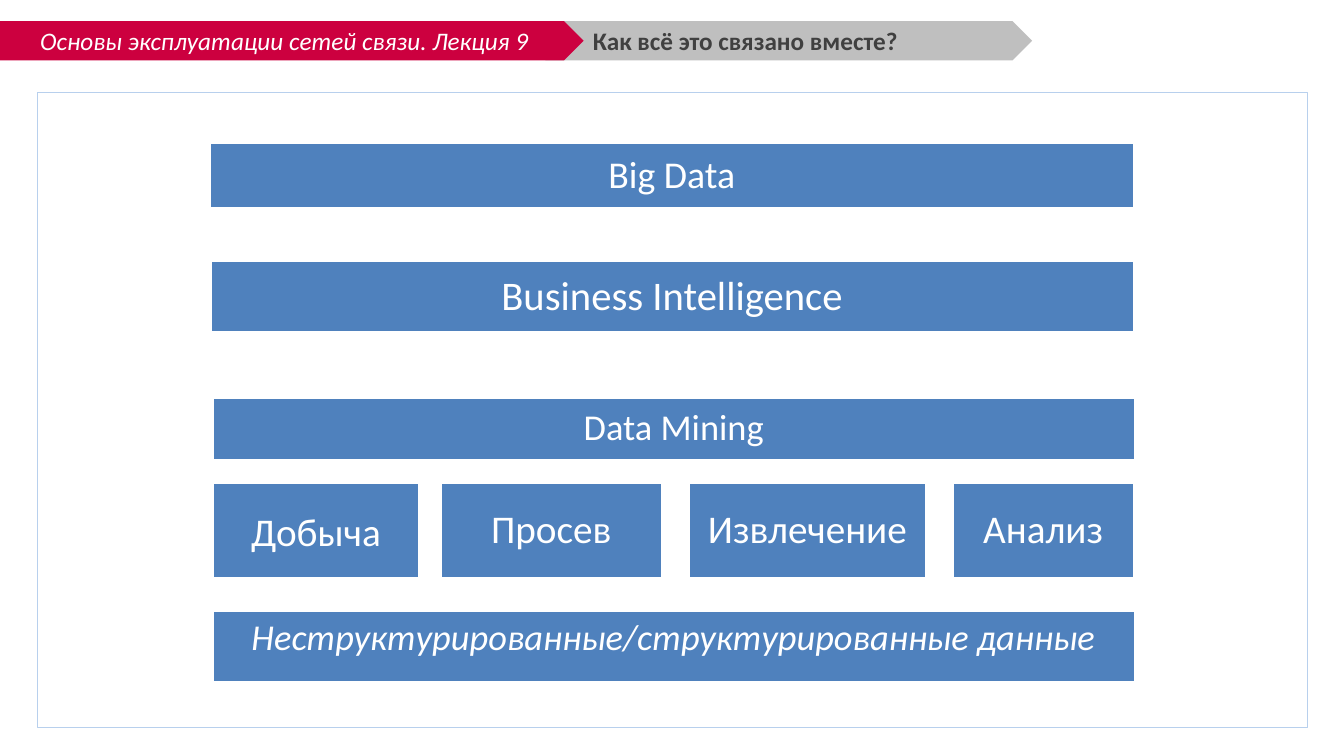
from pptx import Presentation
from pptx.dml.color import RGBColor
from pptx.enum.shapes import MSO_SHAPE
from pptx.enum.text import MSO_ANCHOR, MSO_AUTO_SIZE, PP_ALIGN
from pptx.util import Pt

RECT, PLATE = MSO_SHAPE.RECTANGLE, MSO_SHAPE.PENTAGON
MIDDLE, NO_FIT = MSO_ANCHOR.MIDDLE, MSO_AUTO_SIZE.NONE
LEFT, CENTER = PP_ALIGN.LEFT, PP_ALIGN.CENTER

COURSE = "Основы эксплуатации сетей связи. Лекция 9"
HEADING = "Как всё это связано вместе?"
# text, left, top, width, height, size, italic, text shift down
LAYERS = [
    ("Big Data", 149.8, 102.2, 660.2, 46.8, 27, False, 0),
    ("Business Intelligence", 150.5, 186.5, 659.5, 51.1, 29, False, 0),
    ("Data Mining", 151.9, 283.7, 658.8, 45.4, 26, False, 0),
    ("Неструктурированные/структурированные данные",
     151.9, 436.3, 658.8, 51.1, 26, True, -5.8),
]
# text, left, width, text shift down
STAGES = [
    ("Добыча", 151.9, 147.6, 2.5),
    ("Просев", 314.6, 158.4, 0),
    ("Извлечение", 491.8, 169.9, 0),
    ("Анализ", 680.4, 129.6, 0),
]
STAGE_TOP, STAGE_HIGH = 344.9, 68.4
BAND_TOP, BAND_HIGH = 15.1, 28.1

THEME = {
    "font": "Calibri", "head": 18, "stage": 28,
    "white": "FFFFFF", "dark": "404040", "grey": "BFBFBF",
    "red": "CC003F", "blue": "4F81BD", "frame": "B8D0ED",
}


def color(name):
    return RGBColor.from_string(THEME[name])


def place(shape, left, top, width, height):
    shape.left, shape.top = Pt(left), Pt(top)
    shape.width, shape.height = Pt(width), Pt(height)


def draw(slide, kind, box, fill=None, line=None, weight=1):
    shape = slide.shapes.add_shape(kind, *map(Pt, box))
    shape.shadow.inherit = False
    if fill:
        shape.fill.solid()
        shape.fill.fore_color.rgb = color(fill)
    else:
        shape.fill.background()
    if line:
        shape.line.color.rgb = color(line)
        shape.line.width = Pt(weight)
    else:
        shape.line.fill.background()
    return shape


def write(shape, text, size, ink="white", align=CENTER, bold=False, italic=False):
    frame = shape.text_frame
    frame.text = text
    frame.word_wrap = True
    frame.auto_size = NO_FIT
    frame.vertical_anchor = MIDDLE
    para = frame.paragraphs[0]
    para.alignment = align
    font = para.runs[0].font
    font.name, font.size = THEME["font"], Pt(size)
    font.bold, font.italic = bold, italic
    font.color.rgb = color(ink)
    return frame


def block(slide, text, box, size, italic=False, shift=0):
    """Draw a blue block; shift moves its text down from the middle."""
    shape = draw(slide, RECT, box, "blue", "white", 2)
    frame = write(shape, text, size, italic=italic)
    frame.margin_left = frame.margin_right = Pt(8)
    frame.margin_top = Pt(8 + max(2 * shift, 0))
    frame.margin_bottom = Pt(8 + max(-2 * shift, 0))
    frame.paragraphs[0].line_spacing = 0.9


def main():
    deck = Presentation()
    deck.slide_width, deck.slide_height = Pt(960), Pt(540)
    slide = deck.slides.add_slide(deck.slide_layouts[5])

    draw(slide, PLATE, (389.5, BAND_TOP, 347.8, BAND_HIGH), "grey")
    draw(slide, RECT, (26.6, 66.2, 907.2, 453.6), line="frame", weight=0.25)
    course = draw(slide, PLATE, (-3.6, BAND_TOP, 420.5, BAND_HIGH), "red")
    write(course, COURSE, THEME["head"], italic=True)

    title = slide.shapes.title
    place(title, 416.2, BAND_TOP, 298.1, BAND_HIGH)
    write(title, HEADING, THEME["head"], "dark", LEFT, bold=True)
    # Bring the heading in front of the grey band
    title.element.getparent().append(title.element)

    for text, left, top, width, height, size, italic, shift in LAYERS:
        block(slide, text, (left, top, width, height), size, italic, shift)
    for text, left, width, shift in STAGES:
        box = (left, STAGE_TOP, width, STAGE_HIGH)
        block(slide, text, box, THEME["stage"], shift=shift)

    deck.save("out.pptx")


if __name__ == "__main__":
    main()
